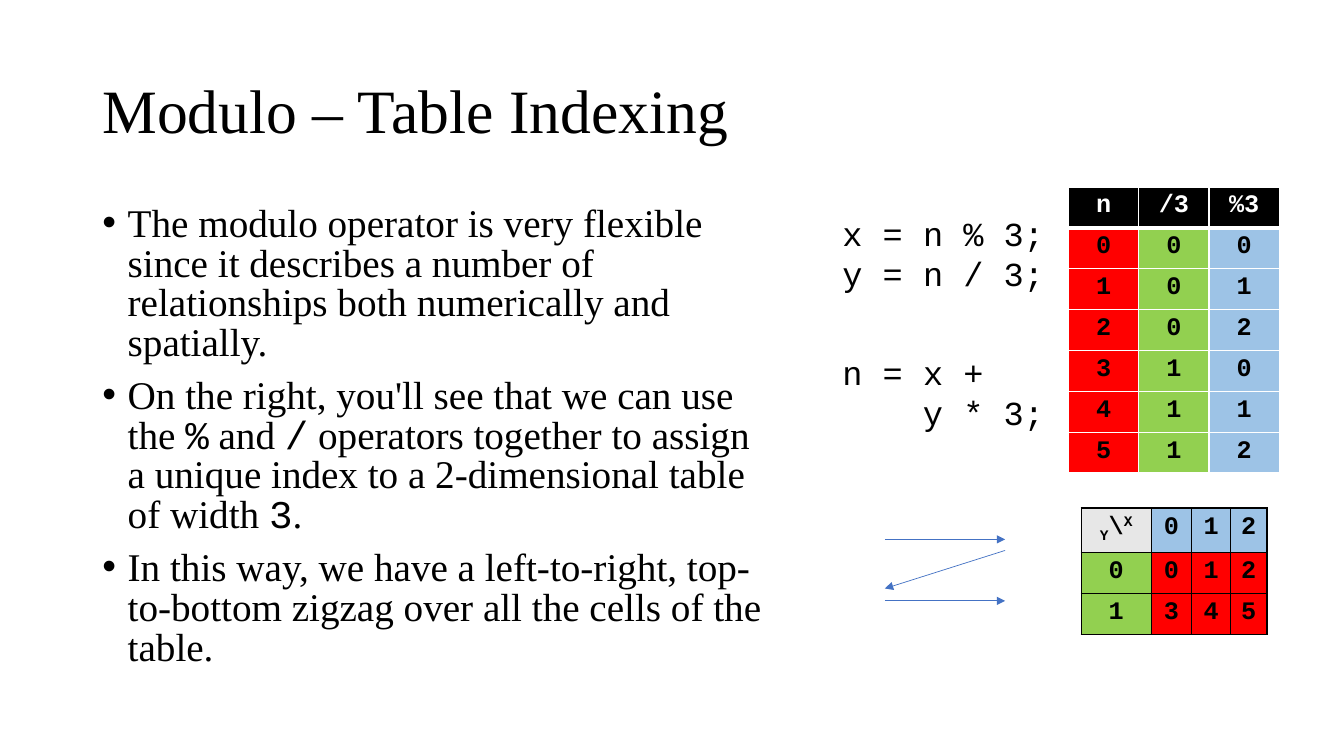
import pptx
import pptx.util
import pptx.dml.color
import pptx.enum.shapes
import pptx.enum.text
import pptx.oxml.ns
import lxml.etree

Cm, Pt = pptx.util.Cm, pptx.util.Pt
SERIF, MONO = "Times New Roman", "Courier New"
COLORS = {"black": "000000", "white": "FFFFFF", "n": "FF0000", "y": "92D050",
          "x": "9DC3E6", "corner": "E7E7E7", "arrow": "4472C4"}

# Content: a paragraph is a list of (text, run format) pairs
TITLE = [[("Modulo – Table Indexing", {})]]
CODE = {"font": MONO}
BULLETS = [
    [("The modulo operator is very flexible since it describes a number of "
      "relationships both numerically and spatially.", {})],
    [("On the right, you'll see that we can use the ", {}), ("%", CODE),
     (" and ", {}), ("/", CODE),
     (" operators together to assign a unique index to a 2-dimensional table of width ", {}),
     ("3", CODE), (".", {})],
    [("In this way, we have a left-to-right, top-to-bottom zigzag over all "
      "the cells of the table.", {})],
]
SPLIT_CODE = [[("x = n % 3;", {})], [("y = n / 3;", {})]]
JOIN_CODE = [[("n = x +", {})], [("y * 3;", {})]]
WIDTH, HEIGHT = 3, 2  # size of the indexed table
HEADINGS = ["n", "/3", "%3"]
CORNER = [("Y", {"baseline": -25}), ("\\", {}), ("X", {"baseline": 30})]

# Geometry in centimetres
ROW_HEIGHT = 1.03
DIVISION_COLUMNS = [1.77] * 3
INDEX_COLUMNS = [1.76, 1.02, 0.98, 0.92]
ARROW_LEFT, ARROW_RIGHT = 22.3, 25.33
ZIGZAG = [(ARROW_LEFT, 13.59, ARROW_RIGHT, 13.59),
          (ARROW_LEFT, 15.14, ARROW_RIGHT, 15.14),
          (ARROW_RIGHT, 13.87, ARROW_LEFT, 14.83)]


def rgb(name):
    return pptx.dml.color.RGBColor.from_string(COLORS[name])


def add_element(parent, tag, **attributes):
    return lxml.etree.SubElement(parent, pptx.oxml.ns.qn(tag), attributes)


def write(frame, paragraphs, font=SERIF, size=18, color="black", bold=False,
          align=None, spacing=None, before=0, bullet=False):
    for index, runs in enumerate(paragraphs):
        para = frame.paragraphs[0] if index == 0 else frame.add_paragraph()
        para.alignment = align
        para.space_before = Pt(before)
        if spacing:
            para.line_spacing = spacing
        if bullet:
            properties = para._p.get_or_add_pPr()
            properties.set("marL", str(Cm(0.64)))
            properties.set("indent", str(-Cm(0.64)))
            add_element(properties, "a:buFont", typeface="Arial")
            add_element(properties, "a:buChar", char="•")
        for text, style in runs:
            span = para.add_run()
            span.text = text
            span.font.name = style.get("font", font)
            span.font.size = Pt(size)
            span.font.bold = bold
            span.font.color.rgb = rgb(color)
            if "baseline" in style:
                span._r.get_or_add_rPr().set("baseline", str(style["baseline"] * 1000))


def add_text(slide, place, paragraphs, anchor=pptx.enum.text.MSO_ANCHOR.TOP, **style):
    box = slide.shapes.add_textbox(*map(Cm, place))
    box.text_frame.word_wrap = True
    box.text_frame.vertical_anchor = anchor
    write(box.text_frame, paragraphs, **style)
    return box


def add_border(cell, side, color, width):
    line = add_element(cell._tc.get_or_add_tcPr(), "a:ln" + side, w=str(Pt(width)))
    add_element(add_element(line, "a:solidFill"), "a:srgbClr", val=COLORS[color])


def add_grid(slide, left, top, columns, rows, border, heading_rule=1):
    """Each cell of rows is (runs, fill, text colour)."""
    table = slide.shapes.add_table(
        len(rows), len(columns), Cm(left), Cm(top),
        Cm(sum(columns)), Cm(ROW_HEIGHT * len(rows))).table
    table.horz_banding = False
    for column, width in zip(table.columns, columns):
        column.width = Cm(width)
    for r, row in enumerate(rows):
        table.rows[r].height = Cm(ROW_HEIGHT)
        for c, (runs, fill, color) in enumerate(row):
            cell = table.cell(r, c)
            widths = {"L": 1, "R": 1, "T": heading_rule if r == 1 else 1,
                      "B": heading_rule if r == 0 else 1}
            for side, width in widths.items():
                add_border(cell, side, border, width)
            cell.fill.solid()
            cell.fill.fore_color.rgb = rgb(fill)
            write(cell.text_frame, [runs], font=MONO, color=color, bold=True,
                  align=pptx.enum.text.PP_ALIGN.CENTER)


def item(value, fill, color="black"):
    return [(str(value), {})], fill, color


def add_arrow(group, x1, y1, x2, y2):
    arrow = group.shapes.add_connector(
        pptx.enum.shapes.MSO_CONNECTOR.STRAIGHT, Cm(x1), Cm(y1), Cm(x2), Cm(y2))
    arrow.line.color.rgb = rgb("arrow")
    arrow.line.width = Pt(0.5)
    add_element(arrow.line._get_or_add_ln(), "a:tailEnd", type="triangle")
    add_element(arrow._element.spPr, "a:effectLst")


def main():
    deck = pptx.Presentation()
    deck.slide_width, deck.slide_height = Cm(33.87), Cm(19.05)
    slide = deck.slides.add_slide(deck.slide_layouts[6])

    # Title and bullets
    add_text(slide, (2.33, 1.01, 29.21, 3.68), TITLE, size=44, spacing=0.9,
             anchor=pptx.enum.text.MSO_ANCHOR.MIDDLE)
    add_text(slide, (2.33, 5.07, 17.45, 12.09), BULLETS, size=28, spacing=0.84,
             before=10, bullet=True)

    # Quotient and remainder of every index
    division = [[item(heading, "black", "white") for heading in HEADINGS]]
    for n in range(WIDTH * HEIGHT):
        division.append([item(n, "n"), item(n // WIDTH, "y"), item(n % WIDTH, "x")])
    add_grid(slide, 26.93, 4.71, DIVISION_COLUMNS, division, "white", heading_rule=3)

    # Index of every (x, y) cell
    index = [[(CORNER, "corner", "black")] + [item(x, "x") for x in range(WIDTH)]]
    for y in range(HEIGHT):
        index.append([item(y, "y")] + [item(x + y * WIDTH, "n") for x in range(WIDTH)])
    add_grid(slide, 27.25, 12.8, INDEX_COLUMNS, index, "black")

    # Zigzag reading order
    group = slide.shapes.add_group_shape()
    for ends in ZIGZAG:
        add_arrow(group, *ends)

    # Code, with the second line of the sum indented by four characters
    add_text(slide, (20.98, 5.23, 5.67, 2.31), SPLIT_CODE, font=MONO, size=24)
    join_box = add_text(slide, (20.98, 8.74, 5.67, 2.31), JOIN_CODE, font=MONO, size=24)
    continuation = join_box.text_frame.paragraphs[1]
    continuation._p.get_or_add_pPr().set("marL", str(Cm(2.03)))

    deck.save("out.pptx")


if __name__ == "__main__":
    main()
